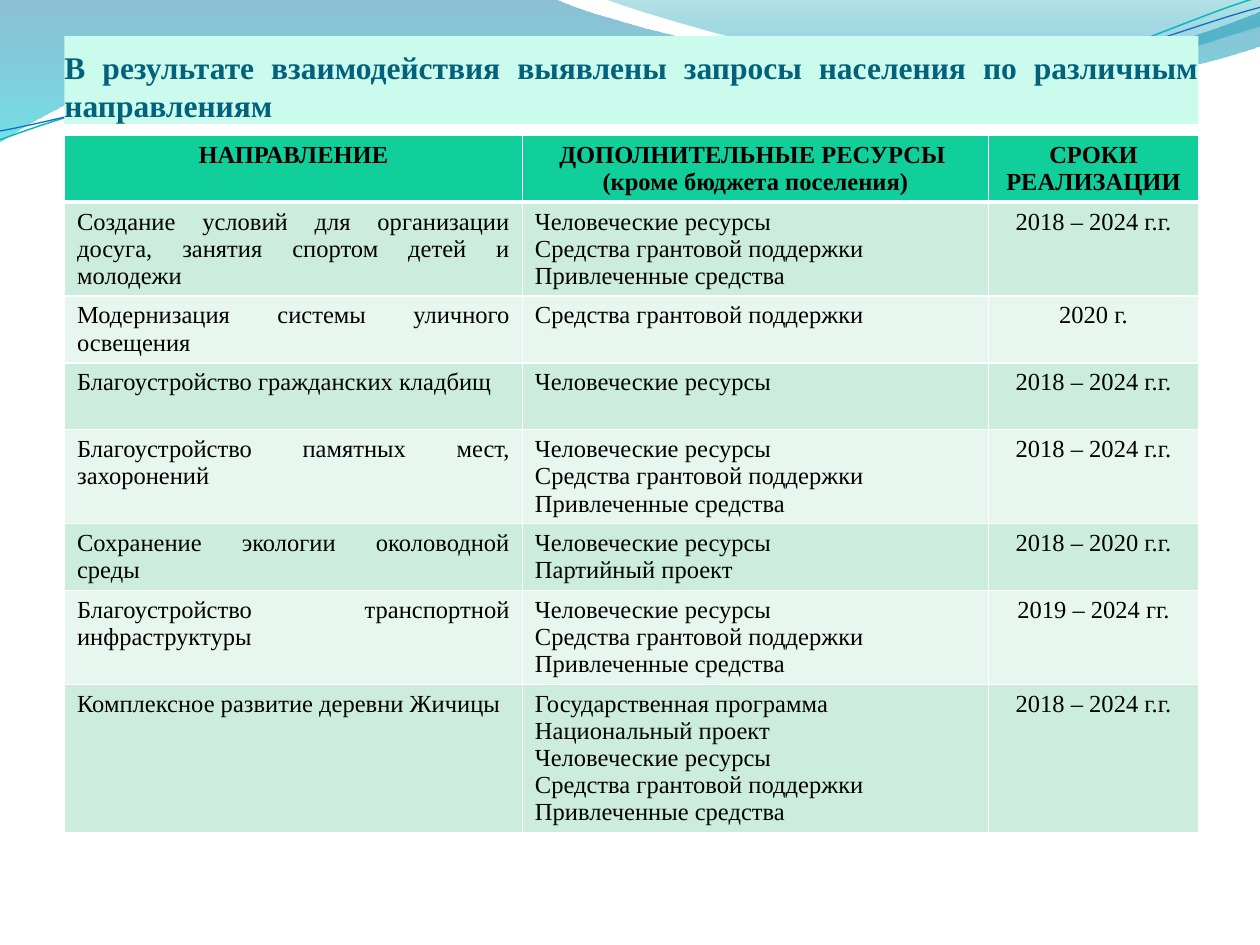
from dataclasses import dataclass

from lxml.etree import SubElement
from pptx import Presentation
from pptx.dml.color import RGBColor
from pptx.enum.shapes import MSO_SHAPE
from pptx.enum.text import MSO_ANCHOR, PP_ALIGN
from pptx.oxml.ns import qn
from pptx.util import Cm, Pt


@dataclass(frozen=True)
class Theme:
    font: str = "Times New Roman"
    title_size: int = 18
    table_size: int = 14
    title_text: str = "04617B"
    title_fill: str = "CAFBED"
    table_text: str = "000000"
    header_fill: str = "10CF9B"
    band_fills: tuple = ("CCEDDE", "E7F6EF")
    border: str = "FFFFFF"
    # Gradient stops: position, colour, opacity in percent
    broad_wave: tuple = ((0, "0074A1", 45), (1, "00C6CF", 55))
    small_wave: tuple = ((0, "00A1A9", 30), (0.8, "008BBF", 45))
    teal_line: str = "0AB8BF"
    blue_line: str = "0F6FC6"


# Outlines in cm: two numbers are a straight step, six are a Bezier curve.
# Each box is left, top, width, height.
BROAD_WAVE = [
    (0, 0), (11.18, -0.03),
    (12.09, 0.43, 16.87, 1.6, 19.25, 1.6),
    (21.67, 1.6, 24.33, 0.66, 25.4, 0.23),
    (25.43, 0.91),
    (24.97, 1.12, 22.1, 1.93, 18.95, 1.91),
    (15.8, 1.91, 9.7, 0.71, 6.53, 0.86),
    (3.28, 0.91, 1.17, 2.11, -0.03, 2.87),
    (0, 0),
]
BROAD_WAVE_BOX = (-0.03, -0.03, 25.46, 2.9)
SMALL_WAVE = [
    (12.17, -0.03),
    (12.93, 0.28, 17.32, 1.57, 19.53, 1.65),
    (21.84, 1.75, 24.41, 0.81, 25.4, 0.53),
    (25.4, 0),
    (12.17, -0.03),
]
SMALL_WAVE_BOX = (12.17, -0.03, 13.23, 1.78)
TEAL_CURVE = [
    (-0.05, 2.22),
    (1.19, 1.82, 4.02, 1.04, 7.05, 1.05),
    (10.05, 1.07, 15.02, 2.37, 18.08, 2.29),
    (21.13, 2.2, 23.86, 0.91, 25.41, 0.55),
]
TEAL_CURVE_BOX = (-0.05, 0.55, 25.46, 1.81)
BLUE_CURVE = [
    (-0.04, 2.04),
    (1.16, 1.9, 4.17, 1.15, 7.2, 1.16),
    (10.25, 1.18, 15.13, 2.25, 18.19, 2.16),
    (21.21, 2.1, 23.93, 1.06, 25.45, 0.75),
]
BLUE_CURVE_BOX = (-0.04, 0.75, 25.49, 1.47)
CURVE_ROTATION = 357.3

TITLE = "В результате взаимодействия выявлены запросы населения по различным направлениям"
PEOPLE = "Человеческие ресурсы"
GRANTS = "Средства грантовой поддержки"
ATTRACTED = "Привлеченные средства"
ALL_RESOURCES = f"{PEOPLE} \n{GRANTS}\n{ATTRACTED}"
LONG_TERM = "2018 – 2024 г.г."

ROWS = [
    ("НАПРАВЛЕНИЕ", "ДОПОЛНИТЕЛЬНЫЕ РЕСУРСЫ \v(кроме бюджета поселения)", "СРОКИ РЕАЛИЗАЦИИ"),
    ("Создание условий для организации досуга, занятия спортом детей и молодежи",
     ALL_RESOURCES, LONG_TERM),
    ("Модернизация системы уличного освещения", GRANTS, "2020 г."),
    ("Благоустройство гражданских кладбищ", PEOPLE, LONG_TERM),
    ("Благоустройство памятных мест, захоронений", ALL_RESOURCES, LONG_TERM),
    ("Сохранение экологии околоводной среды", f"{PEOPLE}\nПартийный проект", "2018 – 2020 г.г."),
    ("Благоустройство транспортной инфраструктуры", ALL_RESOURCES, "2019 – 2024 гг."),
    ("Комплексное развитие деревни Жичицы ",
     f"Государственная программа\nНациональный проект\n{ALL_RESOURCES}", LONG_TERM),
]
COLUMN_WIDTHS = (9.23, 9.4, 4.23)
ROW_HEIGHTS = (1.35, 1.89, 1.35, 1.35, 1.89, 1.35, 1.89, 2.96)


class SlideBuilder:
    def __init__(self, slide, theme):
        self.slide = slide
        self.theme = theme

    def outline(self, segments, box):
        """Build a freeform through the segment ends, then bend its steps into curves."""
        ends = [(Cm(segment[-2]), Cm(segment[-1])) for segment in segments]
        builder = self.slide.shapes.build_freeform(*ends[0])
        builder.add_line_segments(ends[1:], close=ends[0] == ends[-1])
        shape = builder.convert_to_shape()
        shape.shadow.inherit = False
        left, top, width, height = (Cm(length) for length in box)
        shape.left, shape.top, shape.width, shape.height = left, top, width, height
        path = next(shape._element.spPr.iter(qn("a:path")))
        path.set("w", str(width))
        path.set("h", str(height))
        for step, segment in zip(list(path), segments):
            if len(segment) == 6:
                step.tag = qn("a:cubicBezTo")
            for point in list(step):
                step.remove(point)
            for x, y in zip(segment[::2], segment[1::2]):
                SubElement(step, qn("a:pt"), x=str(Cm(x) - left), y=str(Cm(y) - top))
        return shape

    def wave(self, segments, box, stops):
        shape = self.outline(segments, box)
        shape.line.fill.background()
        shape.fill.gradient()
        shape.fill.gradient_angle = 270
        for stop, (position, color, _) in zip(shape.fill.gradient_stops, stops):
            stop.position = position
            stop.color.rgb = RGBColor.from_string(color)
        colors = shape._element.spPr.iter(qn("a:srgbClr"))
        for color, (_, _, opacity) in zip(colors, stops):
            SubElement(color, qn("a:alpha"), val=str(opacity * 1000))

    def curve(self, segments, box, color, width):
        shape = self.outline(segments, box)
        shape.rotation = CURVE_ROTATION
        shape.fill.background()
        shape.line.color.rgb = RGBColor.from_string(color)
        shape.line.width = Pt(width)

    def format_text(self, text_frame, size, color, bold, alignment):
        for paragraph in text_frame.paragraphs:
            paragraph.alignment = alignment
            for run in paragraph.runs:
                run.font.name = self.theme.font
                run.font.size = Pt(size)
                run.font.bold = bold
                run.font.color.rgb = RGBColor.from_string(color)

    def title(self, text, left, top, width, height):
        shape = self.slide.shapes.add_shape(
            MSO_SHAPE.RECTANGLE, Cm(left), Cm(top), Cm(width), Cm(height))
        shape.shadow.inherit = False
        shape.fill.solid()
        shape.fill.fore_color.rgb = RGBColor.from_string(self.theme.title_fill)
        shape.line.fill.background()
        frame = shape.text_frame
        frame.word_wrap = True
        frame.vertical_anchor = MSO_ANCHOR.BOTTOM
        frame.margin_left = frame.margin_right = frame.margin_bottom = 0
        frame.text = text
        self.format_text(frame, self.theme.title_size, self.theme.title_text,
                         True, PP_ALIGN.JUSTIFY)

    def cell_borders(self, cell, widths):
        properties = cell._tc.get_or_add_tcPr()
        for side, width in zip("LRTB", widths):
            line = SubElement(properties, qn(f"a:ln{side}"), w=str(Pt(width)))
            fill = SubElement(line, qn("a:solidFill"))
            SubElement(fill, qn("a:srgbClr"), val=self.theme.border)

    def table(self, rows, left, top, column_widths, row_heights):
        table = self.slide.shapes.add_table(
            len(rows), len(column_widths), Cm(left), Cm(top),
            Cm(sum(column_widths)), Cm(sum(row_heights))).table
        table.horz_banding = False
        for column, width in zip(table.columns, column_widths):
            column.width = Cm(width)
        for row, height in zip(table.rows, row_heights):
            row.height = Cm(height)
        for row_index, texts in enumerate(rows):
            header = row_index == 0
            fill = self.theme.header_fill if header else self.theme.band_fills[(row_index - 1) % 2]
            borders = (1, 1, 3 if row_index == 1 else 1, 3 if header else 1)
            for column_index, text in enumerate(texts):
                cell = table.cell(row_index, column_index)
                self.cell_borders(cell, borders)
                cell.fill.solid()
                cell.fill.fore_color.rgb = RGBColor.from_string(fill)
                cell.text_frame.text = text
                centred = header or column_index == len(texts) - 1
                self.format_text(cell.text_frame, self.theme.table_size, self.theme.table_text,
                                 header, PP_ALIGN.CENTER if centred else PP_ALIGN.JUSTIFY)


def main():
    presentation = Presentation()
    presentation.slide_width = Cm(25.4)
    presentation.slide_height = Cm(19.05)
    theme = Theme()
    slide = presentation.slides.add_slide(presentation.slide_layouts[6])
    builder = SlideBuilder(slide, theme)
    builder.wave(BROAD_WAVE, BROAD_WAVE_BOX, theme.broad_wave)
    builder.wave(SMALL_WAVE, SMALL_WAVE_BOX, theme.small_wave)
    builder.curve(TEAL_CURVE, TEAL_CURVE_BOX, theme.teal_line, 0.85)
    builder.curve(BLUE_CURVE, BLUE_CURVE_BOX, theme.blue_line, 0.75)
    builder.title(TITLE, 1.3, 0.73, 22.86, 1.77)
    builder.table(ROWS, 1.3, 2.72, COLUMN_WIDTHS, ROW_HEIGHTS)
    presentation.save("out.pptx")


if __name__ == "__main__":
    main()
